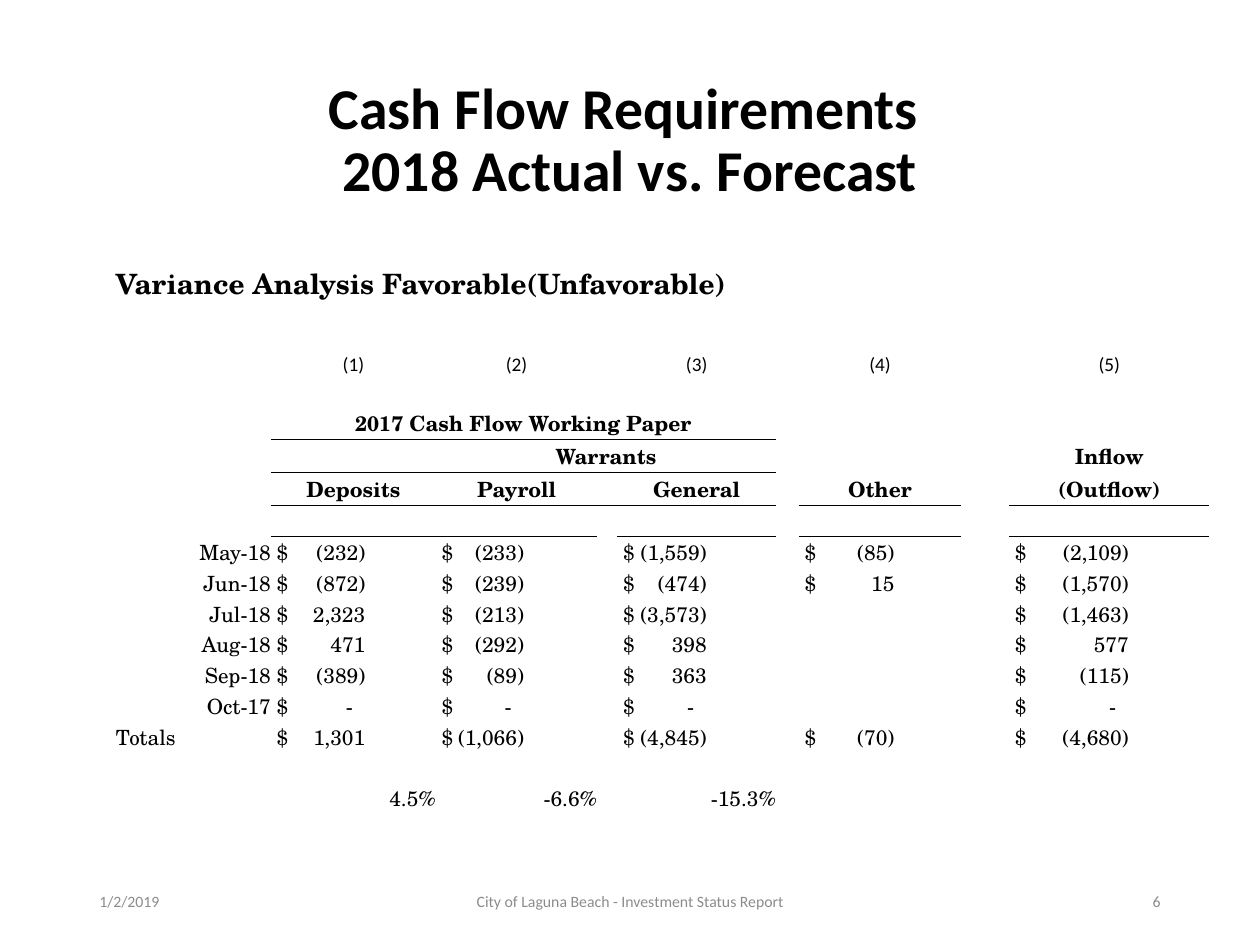
from lxml.etree import SubElement
from pptx import Presentation
from pptx.dml.color import RGBColor as Color
from pptx.enum.text import MSO_ANCHOR as Anchor, PP_ALIGN as Align
from pptx.oxml import parse_xml
from pptx.oxml.ns import nsdecls, qn
from pptx.util import Emu, Inches, Pt

COLORS = {"ink": "000000", "muted": "8C8C8C"}
SANS, SERIF = "Calibri", "TeX Gyre Schola"
NO_GRID = "{2D5ABB26-0587-4C30-8999-92F81FD0307C}"

TITLE = "Cash Flow Requirements \v2018 Actual vs. Forecast"
HEADING = "Variance Analysis Favorable(Unfavorable)"
FOOTERS = [
    ("1/2/2019", 0.69, 2.25, Align.LEFT),
    ("City of Laguna Beach - Investment Status Report", 3.31, 3.38, Align.CENTER),
    ("6", 7.06, 2.25, Align.RIGHT),
]

COLUMNS = [1.23, 1.31, 1.28, 0.16, 1.26, 0.18, 1.29, 0.38, 1.59]
HEAD_ROWS = [0.34, 0.16, 0.16, 0.25, 0.24, 0.26, 0.26, 0.26, 0.25]
BODY_HEIGHT, BODY_COUNT = 2.2, 9
AMOUNT_TABS = {1: 0.75, 2: 0.7, 4: 0.71, 6: 0.76, 8: 0.95}
DASH_SHIFT = 0.1

NUMBERS = ["(1)", "(2)", "(3)", "(4)", "(5)"]
BANNERS = {
    (5, 1): ("2017 Cash Flow Working Paper", 4),
    (6, 2): ("Warrants", 3),
    (6, 8): ("Inflow", 1),
}
LABELS = ["Deposits", "Payroll", "General", "Other", "(Outflow)"]
RULED = {5: (1, 2, 3, 4), 6: (2, 3, 4), 7: (1, 2, 4, 6, 8)}
MONTHS = [
    ("May-18", "(232)", "(233)", "(1,559)", "(85)", "(2,109)"),
    ("Jun-18", "(872)", "(239)", "(474)", "15", "(1,570)"),
    ("Jul-18", "2,323", "(213)", "(3,573)", "", "(1,463)"),
    ("Aug-18", "471", "(292)", "398", "", "577"),
    ("Sep-18", "(389)", "(89)", "363", "", "(115)"),
    ("Oct-17", "-", "-", "-", "", "-"),
    ("Totals", "1,301", "(1,066)", "(4,845)", "(70)", "(4,680)"),
]
SHARES = ["4.5%", "-6.6%", "-15.3%"]


def style(para, size, face, color="ink", bold=False, align=Align.LEFT):
    para.alignment = align
    font = para.font
    font.size, font.name, font.bold = Pt(size), face, bold
    font.color.rgb = Color.from_string(COLORS[color])


def add_text(page, text, left, top, width, height, **look):
    box = page.shapes.add_textbox(*map(Inches, (left, top, width, height)))
    frame = box.text_frame
    frame.word_wrap = True
    frame.vertical_anchor = Anchor.MIDDLE
    para = frame.paragraphs[0]
    para.text = text
    style(para, **look)
    return para


def write(cell, text, size=12, face=SERIF, bold=False, align=Align.LEFT):
    para = cell.text_frame.paragraphs[0]
    para.text = text
    style(para, size, face, bold=bold, align=align)


def write_amount(cell, amount, stop):
    para = cell.text_frame.paragraphs[0]
    props = para._p.get_or_add_pPr()
    tabs = SubElement(props, qn("a:tabLst"))
    place = stop - DASH_SHIFT if amount == "-" else stop
    SubElement(tabs, qn("a:tab"), pos=str(Inches(place)), algn="r")
    write(cell, f" $\t{amount}")


def rule(cell, edge):
    line = parse_xml(
        f'<a:{edge} {nsdecls("a")} w="{Pt(0.5)}"><a:solidFill>'
        f'<a:srgbClr val="{COLORS["ink"]}"/></a:solidFill></a:{edge}>'
    )
    props = cell._tc.get_or_add_tcPr()
    props.insert(len(props.findall(qn("a:lnT"))), line)


def add_cash_table(page):
    heights = HEAD_ROWS + [BODY_HEIGHT / BODY_COUNT] * BODY_COUNT
    size = (0.92, 2.08, sum(COLUMNS), sum(heights))
    shape = page.shapes.add_table(len(heights), len(COLUMNS), *map(Inches, size))
    table = shape.table
    table.first_row = table.horz_banding = False
    table._tbl.tblPr.find(qn("a:tableStyleId")).text = NO_GRID
    for column, width in zip(table.columns, COLUMNS):
        column.width = Inches(width)
    for row, height in zip(table.rows, heights):
        row.height = Inches(height)
    for cell in table.iter_cells():
        cell.margin_left = cell.margin_right = Emu(0)
        cell.margin_top = cell.margin_bottom = Emu(0)
        cell.vertical_anchor = Anchor.BOTTOM
        cell.fill.background()
        write(cell, "", size=8)

    table.cell(0, 0).merge(table.cell(0, len(COLUMNS) - 1))
    write(table.cell(0, 0), HEADING, size=16, bold=True)
    for col, number, label in zip(AMOUNT_TABS, NUMBERS, LABELS):
        write(table.cell(3, col), number, size=11, face=SANS, align=Align.CENTER)
        write(table.cell(7, col), label, bold=True, align=Align.CENTER)
    for (row, col), (text, span) in BANNERS.items():
        if span > 1:
            table.cell(row, col).merge(table.cell(row, col + span - 1))
        write(table.cell(row, col), text, bold=True, align=Align.CENTER)
    for row, cols in RULED.items():
        for col in cols:
            rule(table.cell(row, col), "lnB")
            rule(table.cell(row + 1, col), "lnT")

    first = len(HEAD_ROWS)
    for row, (month, *amounts) in enumerate(MONTHS, first):
        align = Align.LEFT if month == "Totals" else Align.RIGHT
        write(table.cell(row, 0), month, align=align)
        for (col, stop), amount in zip(AMOUNT_TABS.items(), amounts):
            if amount:
                cell = table.cell(row, col)
                cell.text_frame.paragraphs[0]._p.remove(cell.text_frame.paragraphs[0]._p.pPr)
                write_amount(cell, amount, stop)
    for col, share in zip(AMOUNT_TABS, SHARES):
        write(table.cell(len(heights) - 1, col), share, align=Align.RIGHT)


def main():
    deck = Presentation()
    deck.slide_width, deck.slide_height = Inches(10), Inches(7.5)
    page = deck.slides.add_slide(deck.slide_layouts[6])
    title = add_text(page, TITLE, 0.69, 0.4, 8.62, 1.45,
                     size=33, face=SANS, bold=True, align=Align.CENTER)
    title.line_spacing = 0.9
    add_cash_table(page)
    for text, left, width, align in FOOTERS:
        add_text(page, text, left, 6.95, width, 0.4,
                 size=9, face=SANS, color="muted", align=align)
    deck.save("out.pptx")


if __name__ == "__main__":
    main()
